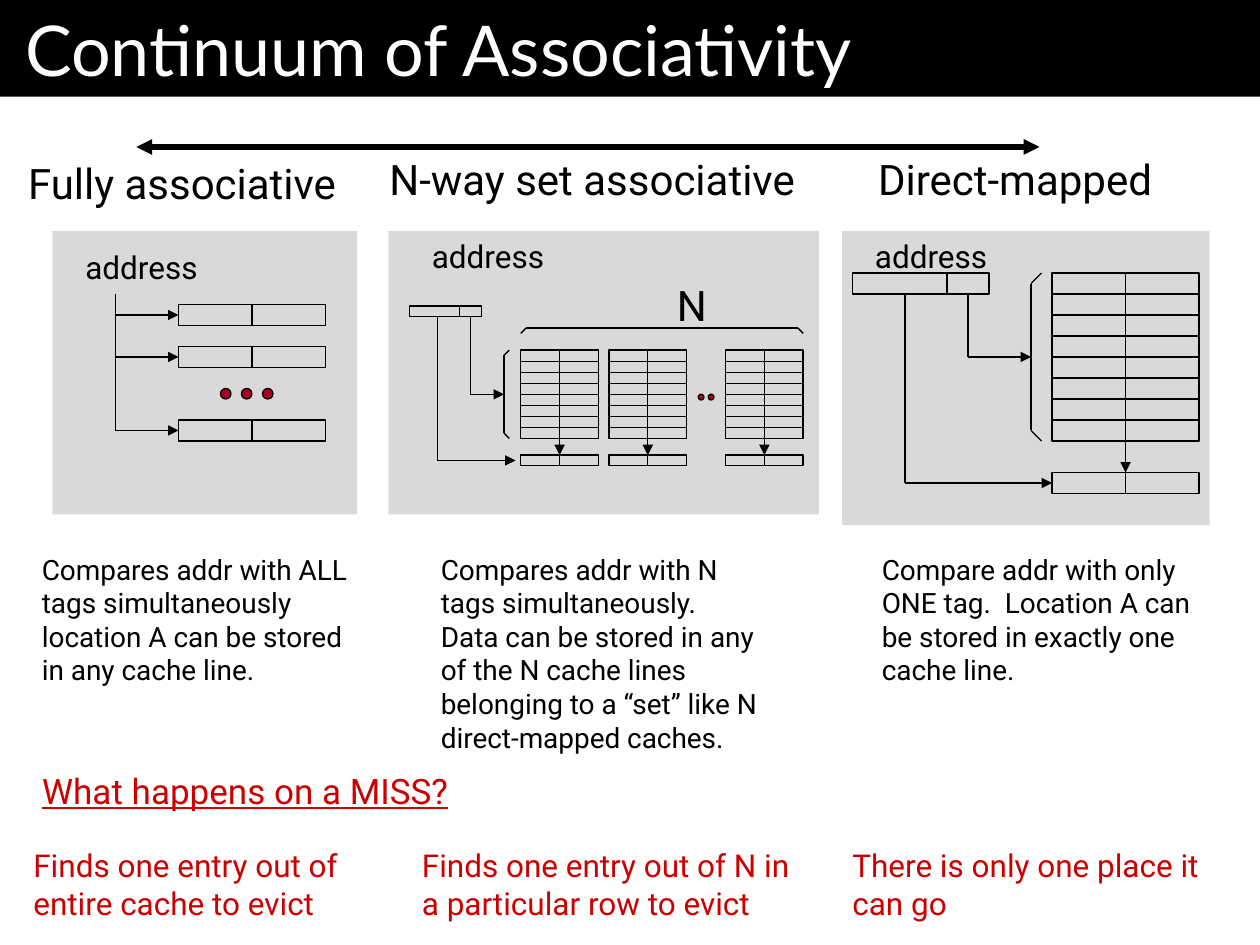
from itertools import pairwise

from lxml.etree import SubElement
from pptx import Presentation
from pptx.dml.color import RGBColor
from pptx.enum.shapes import MSO_CONNECTOR, MSO_SHAPE
from pptx.enum.text import MSO_ANCHOR, MSO_AUTO_SIZE, PP_ALIGN
from pptx.oxml.ns import qn
from pptx.util import Inches, Pt

BLACK = RGBColor(0x00, 0x00, 0x00)
WHITE = RGBColor(0xFF, 0xFF, 0xFF)
GREY = RGBColor(0xD9, 0xD9, 0xD9)
WINE = RGBColor(0xA5, 0x00, 0x21)
RED = RGBColor(0xCC, 0x00, 0x00)

RECT, OVAL = MSO_SHAPE.RECTANGLE, MSO_SHAPE.OVAL
TOP, LEFT, BOTTOM = 0, 1, 2
RIGHT = PP_ALIGN.RIGHT

deck = Presentation()
deck.slide_width, deck.slide_height = Inches(10), Inches(7.5)
slide = deck.slides.add_slide(deck.slide_layouts[6])

# The slide is a grid of 120 columns by 90 rows.
CELL = deck.slide_width / 120


def write(text, *at, kind=None, fill=None, line=BLACK, size=18, font="Roboto",
          color=BLACK, align=PP_ALIGN.LEFT, wrap=True, under=None, pad=0.1):
    """Place text at left, top, width, height in cells, in a shape if kind is set."""
    spot = [round(n * CELL) for n in at]
    if kind is None:
        box = slide.shapes.add_textbox(*spot)
    else:
        box = slide.shapes.add_shape(kind, *spot)
        box.shadow.inherit = False
        if fill is None:
            box.fill.background()
        else:
            box.fill.solid()
            box.fill.fore_color.rgb = fill
        if line is None:
            box.line.fill.background()
        else:
            box.line.color.rgb = line
            box.line.width = Pt(0.75)
    if text:
        frame = box.text_frame
        frame.word_wrap = wrap
        frame.auto_size = MSO_AUTO_SIZE.SHAPE_TO_FIT_TEXT
        frame.margin_left = frame.margin_right = Inches(pad)
        frame.vertical_anchor = MSO_ANCHOR.TOP
        para = frame.paragraphs[0]
        para.alignment = align
        run = para.add_run()
        run.text = text
        run.font.size, run.font.name = Pt(size), font
        run.font.color.rgb, run.font.underline = color, under
    return box


def wire(*points, width=0.75, heads=(), start=None, end=None):
    """Draw lines through the points; start and end are (shape, side) joins."""
    for a, b in pairwise(points):
        link = slide.shapes.add_connector(
            MSO_CONNECTOR.STRAIGHT, *[round(n * CELL) for n in (*a, *b)])
        link.line.color.rgb = BLACK
        link.line.width = Pt(width)
        SubElement(link._element.spPr, qn("a:effectLst"))
        if a == points[0] and start:
            link.begin_connect(*start)
        if b == points[-1]:
            if end:
                link.end_connect(*end)
            for head in heads:
                SubElement(link.line._get_or_add_ln(), qn("a:" + head), type="triangle")


write("Continuum of Associativity", 0, 0, 120, 9.2, kind=RECT, fill=BLACK,
      line=None, size=40, font="Lato", color=WHITE, pad=0.2)
wire((13, 14), (99, 14), width=3, heads=("headEnd", "tailEnd"))

for panel in ((5, 22, 29, 27), (37, 22, 41, 27), (80.2, 22, 35, 28)):
    write("", *panel, kind=RECT, fill=GREY, line=None)

# Fully associative: one address feeds every line
wire((11, 28), (11, 41))
for top in (29, 33, 40):
    entry = write("", 17, top, 14, 2, kind=RECT)
    wire((24, top), (24, top + 2), start=(entry, TOP), end=(entry, BOTTOM))
    wire((11, top + 1), (17, top + 1), heads=["tailEnd"], end=(entry, LEFT))

for left, top, wide in ((21, 37, 1), (23, 37, 1), (25, 37, 1),
                        (66.5, 37.55, 0.55), (67.45, 37.55, 0.55)):
    write("", left, top, wide, wide, kind=OVAL, fill=WINE)

# N-way and direct-mapped: index picks a row, tag is compared below
# lefts, top, width, row height, strip top, address box, split, tag x, index x,
# bracket x, bracket depth, tag arrow tip
banks = (
    ((49.6, 58, 69.1), 33.35, 7.4, 1.05, 43.35, (39, 29.15, 6.85, 1), 43.75,
     41.65, 44.8, 48, 0.5, 49.1),
    ((100.2,), 26, 14, 2, 45, (81.2, 26, 13, 2), 90.2,
     86.2, 92.2, 98.2, 1, 100.2),
)
for lefts, top, wide, row, low, addr, split, tag, index, edge, bend, tip in banks:
    base = top + 8 * row
    strips = []
    for left in lefts:
        mid = left + wide / 2
        table = write("", left, top, wide, 8 * row, kind=RECT)
        for n in range(1, 8):
            wire((left, top + n * row), (left + wide, top + n * row))
        wire((mid, top), (mid, base), start=(table, TOP), end=(table, BOTTOM))
        strip = write("", left, low, wide, addr[3], kind=RECT)
        wire((mid, low), (mid, low + addr[3]), start=(strip, TOP), end=(strip, BOTTOM))
        wire((mid, base), (mid, low), heads=["tailEnd"],
             start=(table, BOTTOM), end=(strip, TOP))
        strips.append(strip)

    foot = addr[1] + addr[3]
    write("", *addr, kind=RECT)
    wire((split, addr[1]), (split, foot))
    wire((edge + bend, top), (edge, top + bend), (edge, base - bend), (edge + bend, base))
    row_mid, tag_mid = top + 4 * row, low + addr[3] / 2
    wire((index, foot), (index, row_mid), (edge, row_mid), heads=["tailEnd"])
    wire((tag, foot), (tag, tag_mid), (tip, tag_mid), heads=["tailEnd"],
         end=(strips[0], LEFT) if tip == lefts[0] else None)

wire((49.6, 31.75), (50.1, 31.25), (76, 31.25), (76.5, 31.75))
write("N", 63.2, 26, 5.3, 6.1, size=24, align=RIGHT, wrap=False)

for left, top, wide in ((6, 23, 14), (38, 22, 15), (81.2, 22, 14)):
    write("address", left, top, wide, 4.8, align=RIGHT)

for text, left, top, wide in (("Fully associative", 1.2, 14.4, 32),
                              ("N-way set associative", 35.4, 14, 41.5),
                              ("Direct-mapped", 82, 14, 28.9)):
    write(text, left, top, wide, 6.1, size=24, align=RIGHT, wrap=False)

for text, left, high in (
        ("Compares addr with ALL tags simultaneously location A can be stored "
         "in any cache line.", 2.8, 14.2),
        ("Compares addr with N tags simultaneously.  Data can be stored in any "
         "of the N cache lines belonging to a “set” like N direct-mapped caches.",
         40.8, 20.6),
        ("Compare addr with only ONE tag.  Location A can be stored in exactly "
         "one cache line.", 82.8, 14.2)):
    write(text, left, 52, 33.2, high, size=16)

write("What happens on a MISS?", 1.3, 72.7, 42.6, 5.3, size=20, color=RED,
      align=RIGHT, wrap=False, under=True)
for text, left, wide in (
        ("Finds one entry out of entire cache to evict", 2, 34),
        ("Finds one entry out of N in a particular row to evict", 39, 39),
        ("There is only one place it can go", 80, 39)):
    write(text, left, 80, wide, 8.5, color=RED)

deck.save("out.pptx")
